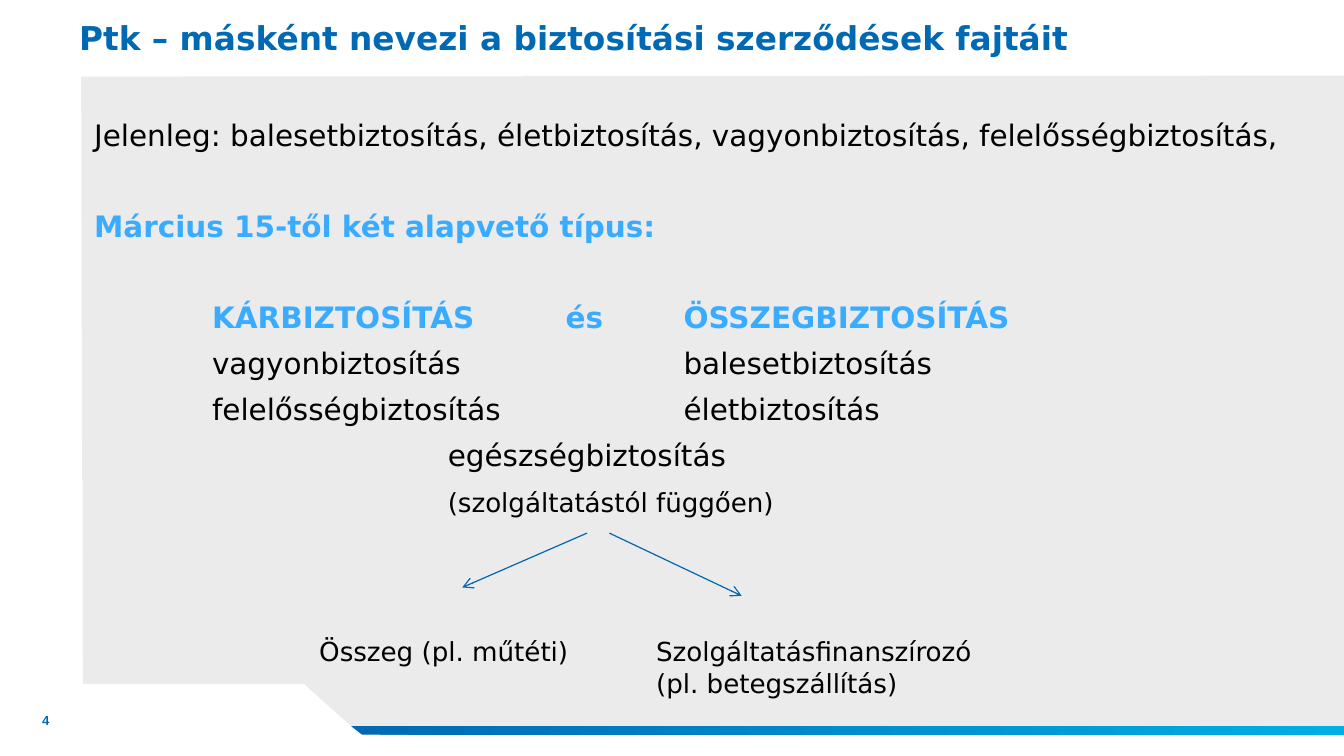
from lxml import etree
from pptx import Presentation
from pptx.dml.color import RGBColor
from pptx.enum.shapes import MSO_CONNECTOR
from pptx.enum.text import MSO_ANCHOR, PP_ALIGN
from pptx.oxml.ns import qn
from pptx.util import Cm, Pt

STRAIGHT = MSO_CONNECTOR.STRAIGHT
MIDDLE = MSO_ANCHOR.MIDDLE
LEFT = PP_ALIGN.LEFT
FONT = "DejaVu Sans"
BLUE, LIGHT_BLUE, CYAN = "0069B4", "39ACFF", "00AEE5"
GREY, WHITE, BLACK = "EBEBEB", "FFFFFF", "000000"
WIDTH, HEIGHT = 28.96, 16.28
TAB_STOPS = (2.54, 7.62, 10.16, 12.7)


def rgb(value):
    return RGBColor.from_string(value)


def add_run(p, text, size, color=BLACK, bold=False, font=FONT):
    r = p.add_run()
    r.text = text
    r.font.name = font
    r.font.size = Pt(size)
    r.font.bold = bold
    r.font.color.rgb = rgb(color)


def add_text_box(s, left, top, width, height):
    tf = s.shapes.add_textbox(Cm(left), Cm(top), Cm(width), Cm(height)).text_frame
    tf.word_wrap = True
    return tf


def add_outline(s, points, color):
    start, *rest = [(Cm(x), Cm(y)) for x, y in points]
    builder = s.shapes.build_freeform(*start)
    builder.add_line_segments(rest, close=True)
    sp = builder.convert_to_shape()
    sp.shadow.inherit = False
    sp.fill.solid()
    sp.fill.fore_color.rgb = rgb(color)
    sp.line.fill.background()
    return sp


def add_background(s, right, bottom):
    """Grey panel, white cut corner and gradient strip, ending at right and bottom."""
    floor = bottom - 0.46
    step = bottom - 1.55
    add_outline(s, [(1.75, 1.65), (1.78, step), (6.55, step), (7.77, floor),
                    (right, floor), (right, 1.63)], GREY)
    add_outline(s, [(1.78, 10.34), (0, 10.34), (0, bottom), (8.81, bottom),
                    (8.84, floor), (7.77, floor), (6.53, step), (1.78, step)], WHITE)
    strip = add_outline(s, [(7.57, floor - 0.18), (right, floor - 0.18),
                            (right, floor), (7.8, floor)], BLUE)
    strip.fill.gradient()
    strip.fill.gradient_angle = 0
    for stop, color in zip(strip.fill.gradient_stops, (BLUE, CYAN)):
        stop.color.rgb = rgb(color)


def add_page_number(s, left, top, width, height):
    tf = add_text_box(s, left, top, width, height)
    tf.word_wrap = False
    add_run(tf.paragraphs[0], "4", 8, BLUE, True, "Arial")


def add_title(s, left, top, width, height):
    title = s.shapes.title
    title.left, title.top = Cm(left), Cm(top)
    title.width, title.height = Cm(width), Cm(height)
    tf = title.text_frame
    tf.vertical_anchor = MIDDLE
    p = tf.paragraphs[0]
    p.alignment = LEFT
    add_run(p, "Ptk – másként nevezi a biztosítási szerződések fajtáit", 20, BLUE, True)


def add_tab_stops(p):
    tabs = etree.SubElement(p._p.get_or_add_pPr(), qn("a:tabLst"))
    for position in TAB_STOPS:
        etree.SubElement(tabs, qn("a:tab"), pos=str(Cm(position)), algn="l")


def add_insurance_types(s, left, top, width, height):
    tf = add_text_box(s, left, top, width, height)
    near, far = 6.5, 34
    lines = [
        ("Jelenleg: balesetbiztosítás, életbiztosítás, vagyonbiztosítás, "
         "felelősségbiztosítás,", 18, False, 0),
        ("Március 15-től két alapvető típus:", 18, True, far),
        ("\tKÁRBIZTOSÍTÁS\tés\tÖSSZEGBIZTOSÍTÁS", 18, True, far),
        ("\tvagyonbiztosítás\t\tbalesetbiztosítás", 18, False, near),
        ("\tfelelősségbiztosítás\t\téletbiztosítás", 18, False, near),
        ("\t\tegészségbiztosítás", 18, False, near),
        ("\t\t(szolgáltatástól függően)", 16, False, near + 2),
    ]
    for i, (text, size, heading, space) in enumerate(lines):
        p = tf.add_paragraph() if i else tf.paragraphs[0]
        add_tab_stops(p)
        p.space_before = Pt(space)
        add_run(p, text, size, LIGHT_BLUE if heading else BLACK, heading)


def add_arrow(s, x1, y1, x2, y2):
    line = s.shapes.add_connector(STRAIGHT, Cm(x1), Cm(y1), Cm(x2), Cm(y2))
    line.line.color.rgb = rgb("0067B0")
    line.line.width = Pt(0.75)
    etree.SubElement(line.line._get_or_add_ln(), qn("a:tailEnd"), type="arrow")
    etree.SubElement(line._element.spPr, qn("a:effectLst"))


def add_health_branches(s, left, top):
    """Two arrows from the health insurance line, each above its label."""
    add_arrow(s, left + 6.02, top, left + 3.33, top + 1.17)
    add_arrow(s, left + 6.5, top, left + 9.35, top + 1.35)
    for offset, width, height, text in (
            (0, 6.86, 0.94, "Összeg (pl. műtéti)"),
            (7.26, 7.6, 1.63, "Szolgáltatásfinanszírozó (pl. betegszállítás)")):
        tf = add_text_box(s, left + offset, top + 2.08, width, height)
        add_run(tf.paragraphs[0], text, 16)


def main():
    prs = Presentation()
    prs.slide_width, prs.slide_height = Cm(WIDTH), Cm(HEIGHT)
    s = prs.slides.add_slide(prs.slide_layouts[5])
    add_background(s, WIDTH, HEIGHT)
    add_page_number(s, 0.66, 15.21, 1.07, 0.61)
    add_title(s, 1.45, 0, 25.93, 1.63)
    add_insurance_types(s, 1.78, 2.39, 26.72, 11.71)
    add_health_branches(s, 6.63, 11.48)
    prs.save("out.pptx")


if __name__ == "__main__":
    main()
